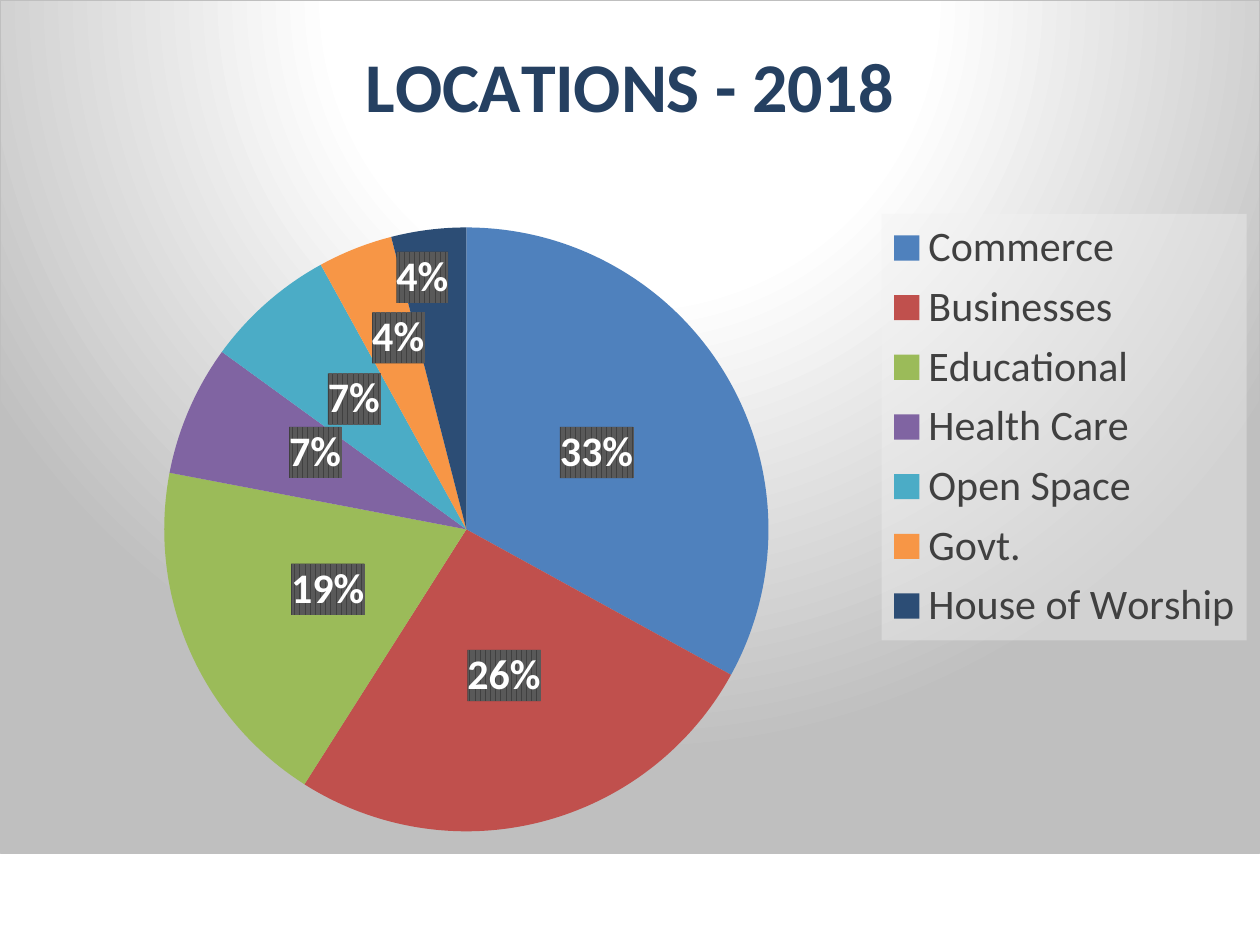
"""Build a one-slide deck with a pie chart of locations in 2018."""
from copy import deepcopy
from lxml import etree
from pptx import Presentation
from pptx.chart.data import CategoryChartData as Data
from pptx.dml.color import RGBColor as RGB
from pptx.enum.chart import XL_CHART_TYPE as Kind
from pptx.enum.chart import XL_LABEL_POSITION as Spot
from pptx.enum.chart import XL_LEGEND_POSITION as Side
from pptx.oxml import parse_xml
from pptx.oxml.ns import nsdecls, qn
from pptx.util import Inches, Pt

HUES = {
    "black": "000000", "white": "FFFFFF", "navy": "254061", "text": "404040",
    "stripe": "595959", "pale": "F2F2F2", "edge": "BFBFBF",
}
PARTS = {
    "Commerce": (33, "4F81BD"),
    "Businesses": (26, "C0504D"),
    "Educational": (19, "9BBB59"),
    "Health Care": (7, "8064A2"),
    "Open Space": (7, "4BACC6"),
    "Govt.": (4, "F79646"),
    "House of Worship": (4, "2C4D75"),
}
SHIFTS = {
    "Health Care": (-0.01, -0.02),
    "Open Space": (-0.01, -0.02),
    "Govt.": (-0.01, -0.06),
    "House of Worship": (-0.02, -0.12),
}


def tint(name, alpha=100):
    """Return the XML of a named colour."""
    return f'<a:srgbClr val="{HUES[name]}"><a:alpha val="{alpha * 1000}"/></a:srgbClr>'


class Page:
    """Hold the style and the current slide."""

    face = "Calibri"
    edge = {"xMode": "edge", "yMode": "edge"}

    def __init__(self, deck):
        """Add a blank slide to the deck."""
        self.slide = deck.slides.add_slide(deck.slide_layouts[6])

    def style(self, font, hue, **form):
        """Set the colour and the format values of a font."""
        for key, val in {"name": self.face, **form}.items():
            setattr(font, key, val)
        font.color.rgb = RGB.from_string(HUES[hue])

    def look(self, body):
        """Return shape properties that wrap the given fill."""
        return parse_xml(f'<c:spPr {nsdecls("c", "a")}>{body}</c:spPr>')

    def place(self, node, prior=None, **rows):
        """Give a chart part a place as shares of the chart area."""
        for old in node.findall(qn("c:layout")):
            node.remove(old)
        lay = etree.Element(qn("c:layout"))
        man = etree.SubElement(lay, qn("c:manualLayout"))
        for tag, val in rows.items():
            etree.SubElement(man, qn(f"c:{tag}")).set("val", str(val))
        if prior:
            node.find(qn(prior)).addnext(lay)
        else:
            node.insert(0, lay)

    def pie(self, title, parts, shifts, box):
        """Add a pie chart with its title, legend and labels."""
        data = Data()
        data.categories = list(parts)
        data.add_series("Series 1", [val for val, _ in parts.values()])
        spots = [Inches(n) for n in box]
        chart = self.slide.shapes.add_chart(Kind.PIE, *spots, data).chart
        self.style(chart.font, "black", size=Pt(10))
        self.paint(chart)
        self.head(chart, title)
        self.key(chart)
        self.slices(chart, parts)
        self.shift(chart, list(parts), shifts)
        area = chart.element.xpath("c:chart/c:plotArea")[0]
        self.place(area, layoutTarget="inner", **self.edge, x=0.13, y=0.26, w=0.48, h=0.72)

    def paint(self, chart):
        """Fill the chart area with a round gradient and a thin border."""
        stops = ((0, "white"), (39, "white"), (100, "edge"))
        steps = "".join(f'<a:gs pos="{at * 1000}">{tint(hue)}</a:gs>' for at, hue in stops)
        chart.element.find(qn("c:chart")).addnext(self.look(
            f'<a:gradFill><a:gsLst>{steps}</a:gsLst><a:path path="circle">'
            '<a:fillToRect l="50000" t="-80000" r="50000" b="180000"/></a:path>'
            f'</a:gradFill><a:ln w="{Pt(0.75)}"><a:solidFill>{tint("edge")}'
            '</a:solidFill></a:ln>'))

    def head(self, chart, text):
        """Write the chart title."""
        chart.has_title = True
        frame = chart.chart_title.text_frame
        frame.text = text
        self.style(frame.paragraphs[0].runs[0].font, "navy", size=Pt(40), bold=True)
        node = chart.element.xpath("c:chart/c:title")[0]
        self.place(node, "c:tx", **self.edge, x=0.28, y=0.03)

    def key(self, chart):
        """Add the legend on a pale sheer panel."""
        chart.has_legend = True
        for key, val in {"position": Side.RIGHT, "include_in_layout": False}.items():
            setattr(chart.legend, key, val)
        self.style(chart.legend.font, "text", size=Pt(24))
        node = chart.element.xpath("c:chart/c:legend")[0]
        self.place(node, "c:legendPos", **self.edge, x=0.7, y=0.25, w=0.29, h=0.5)
        fill = f'<a:solidFill>{tint("pale", 39)}</a:solidFill>'
        node.find(qn("c:txPr")).addprevious(self.look(fill))

    def slices(self, chart, parts):
        """Colour the slices and label them with their share."""
        plot = chart.plots[0]
        plot.vary_by_categories = True
        row = plot.series[0]
        for i, (_, hue) in enumerate(parts.values()):
            fill = row.points[i].format.fill
            fill.solid()
            fill.fore_color.rgb = RGB.from_string(hue)
        tags = row.data_labels
        form = {"show_value": False, "show_percentage": True, "position": Spot.CENTER}
        for key, val in form.items():
            setattr(tags, key, val)
        self.style(tags.font, "white", size=Pt(24), bold=True)
        fill = (f'<a:pattFill prst="dkVert"><a:fgClr>{tint("stripe")}</a:fgClr>'
                f'<a:bgClr>{tint("text")}</a:bgClr></a:pattFill>')
        chart.element.xpath(".//c:ser/c:dLbls/c:txPr")[0].addprevious(self.look(fill))

    def shift(self, chart, names, shifts):
        """Move the labels of narrow slices apart."""
        tags = chart.element.xpath(".//c:ser/c:dLbls")[0]
        lead = qn("c:showLeaderLines")
        for line in tags.findall(lead):
            line.set("val", "0")
        base = [kid for kid in tags if kid.tag != lead]
        for i, (name, (x, y)) in enumerate(shifts.items()):
            tag = parse_xml(f'<c:dLbl {nsdecls("c")}><c:idx val="{names.index(name)}"/></c:dLbl>')
            tag.extend(deepcopy(base))
            self.place(tag, "c:idx", x=x, y=y)
            tags.insert(i, tag)


def main():
    """Make the deck and save it."""
    deck = Presentation()
    deck.slide_width, deck.slide_height = Inches(10), Inches(7.5)
    Page(deck).pie("LOCATIONS - 2018", PARTS, SHIFTS, (0, 0, 10, 6.78))
    deck.save("out.pptx")


if __name__ == "__main__":
    main()
